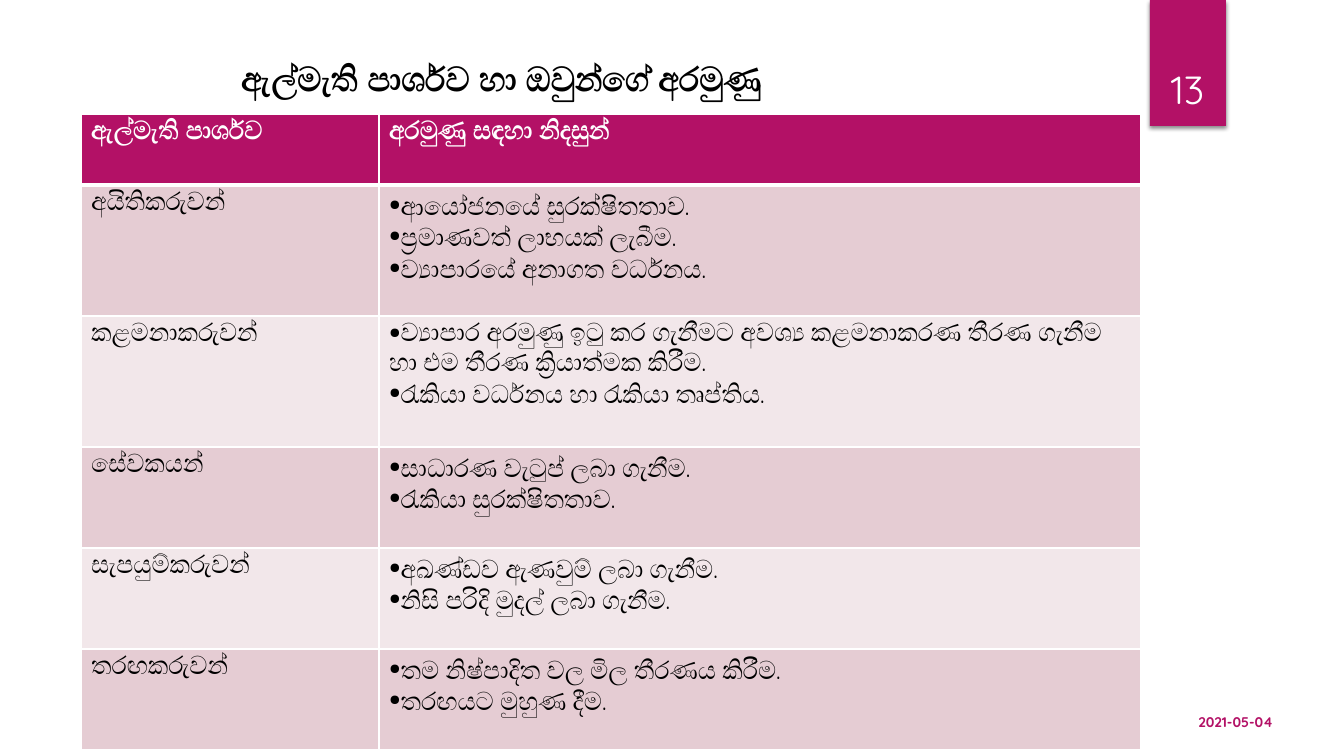
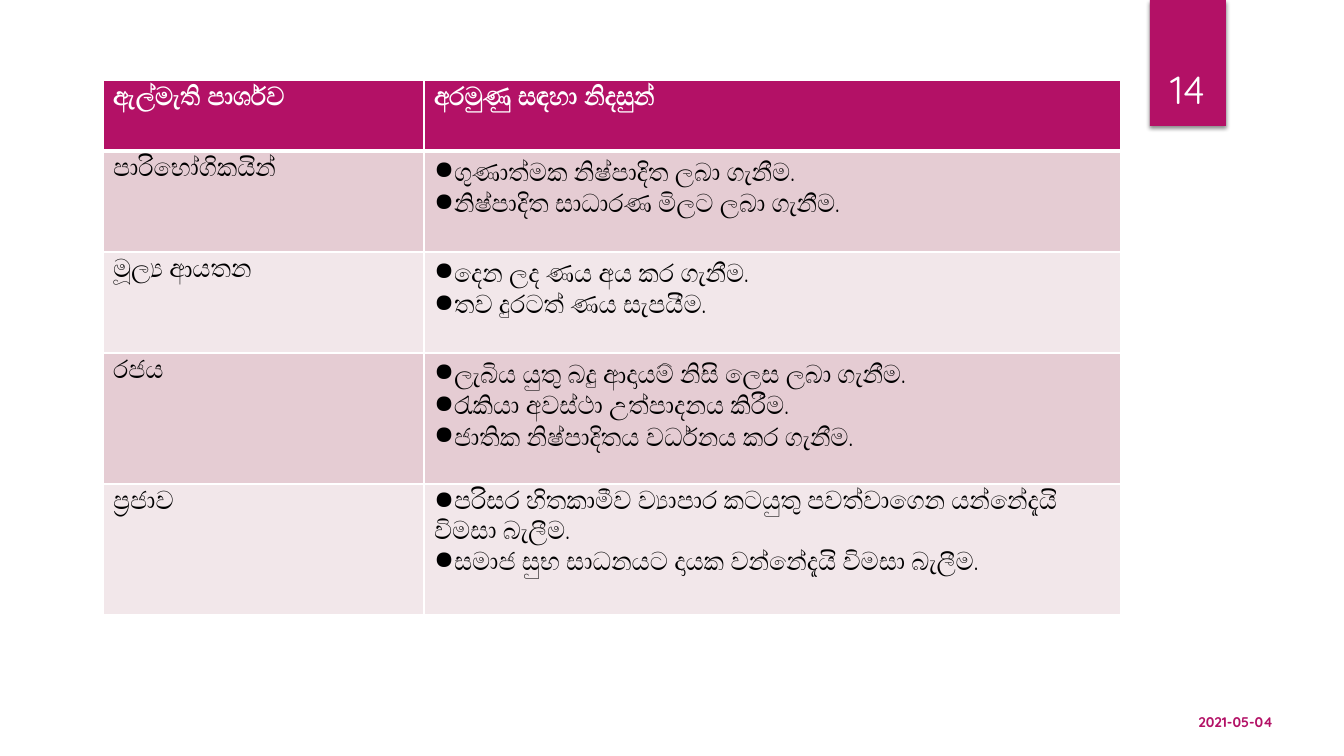
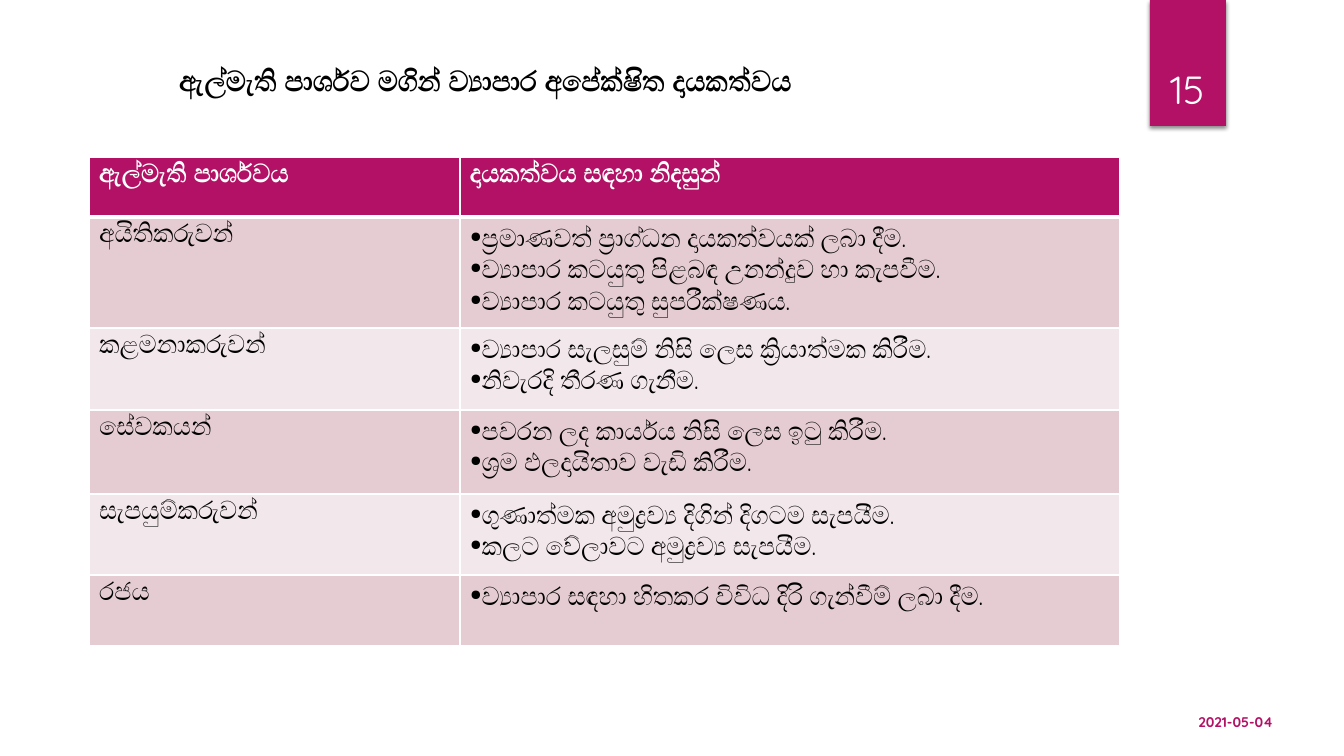
from dataclasses import dataclass
from typing import Any, Optional

from lxml import etree
from pptx import Presentation
from pptx.dml.color import RGBColor
from pptx.enum.shapes import MSO_SHAPE
from pptx.enum.text import MSO_ANCHOR, MSO_AUTO_SIZE, PP_ALIGN
from pptx.oxml.ns import qn
from pptx.util import Emu, Pt

RECT = MSO_SHAPE.RECTANGLE
TOP, MIDDLE, BOTTOM = MSO_ANCHOR.TOP, MSO_ANCHOR.MIDDLE, MSO_ANCHOR.BOTTOM
LEFT, CENTER, RIGHT = PP_ALIGN.LEFT, PP_ALIGN.CENTER, PP_ALIGN.RIGHT
NO_FIT = MSO_AUTO_SIZE.NONE

SLIDE_W, SLIDE_H = 1344, 756
EMU_PER_PX = 12192000 / SLIDE_W
TITLE_ONLY, BLANK = 5, 6

MAGENTA, WHITE, BLACK = "B31166", "FFFFFF", "000000"
BANDS = ("E5CCD3", "F2E7EA")
FONT = "Quicksand"
DATE = "2021-05-04"
JOINER = chr(0x200D)
CONJUNCTS = ("්ර", "ව්ය", "ශ්ය", "ල්ය")

HEADER_FMT = {"size": Pt(18), "bold": True, "color": WHITE}
BODY_FMT = {"size": Pt(18), "bold": False, "color": BLACK}
DATE_FMT = {"size": Pt(10), "bold": True, "color": MAGENTA}
NUMBER_FMT = {"size": Pt(28), "bold": False, "color": WHITE}


@dataclass(frozen=True)
class Box:
    x: int
    y: int
    w: int
    h: int


@dataclass(frozen=True)
class Title:
    text: str
    box: Box
    size: int


@dataclass(frozen=True)
class Row:
    height: int
    party: str
    points: tuple[str, ...]


@dataclass(frozen=True)
class PartySlide:
    number: int
    title: Optional[Title]
    x: int
    y: int
    cols: tuple[int, int]
    header_height: int
    header: tuple[str, str]
    bullet_pct: int
    rows: tuple[Row, ...]


SLIDES = (
    PartySlide(
        13, Title("ඇල්මැති පාර්ශව හා ඔවුන්ගේ අරමුණු", Box(231, 53, 732, 82), 24),
        81, 114, (298, 762), 71, ("ඇල්මැති පාර්ශව", "අරමුණු සඳහා නිදසුන්"), 58,
        (
            Row(131, "අයිතිකරුවන්", (
                "ආයෝජනයේ සුරක්ෂිතතාව.",
                "ප්රමාණවත් ලාභයක් ලැබීම.",
                "ව්යාපාරයේ අනාගත වර්ධනය.")),
            Row(131, "කළමනාකරුවන්", (
                "ව්යාපාර අරමුණු ඉටු කර ගැනීමට අවශ්ය කළමනාකරණ තීරණ ගැනීම "
                "හා එම තීරණ ක්රියාත්මක කිරීම.",
                "රැකියා වර්ධනය හා රැකියා තෘප්තිය.")),
            Row(101, "සේවකයන්", (
                "සාධාරණ වැටුප් ලබා ගැනීම.",
                "රැකියා සුරක්ෂිතතාව.")),
            Row(101, "සැපයුම්කරුවන්", (
                "අඛණ්ඩව ඇණවුම් ලබා ගැනීම.",
                "නිසි පරිදි මුදල් ලබා ගැනීම.")),
            Row(101, "තරඟකරුවන්", (
                "තම නිෂ්පාදිත වල මිල තීරණය කිරීම.",
                "තරඟයට මුහුණ දීම.")),
        )),
    PartySlide(
        14, None,
        103, 80, (321, 697), 71, ("ඇල්මැති පාර්ශව", "අරමුණු සඳහා නිදසුන්"), 100,
        (
            Row(101, "පාරිභෝගිකයින්", (
                "ගුණාත්මක නිෂ්පාදිත ලබා ගැනීම.",
                "නිෂ්පාදිත සාධාරණ මිලට ලබා ගැනීම.")),
            Row(101, "මූල්ය ආයතන", (
                "දෙන ලද ණය අය කර ගැනීම.",
                "තව දුරටත් ණය සැපයීම.")),
            Row(131, "රජය", (
                "ලැබිය යුතු බදු ආදායම් නිසි ලෙස ලබා ගැනීම.",
                "රැකියා අවස්ථා උත්පාදනය කිරීම.",
                "ජාතික නිෂ්පාදිතය වර්ධනය කර ගැනීම.")),
            Row(131, "ප්රජාව", (
                "පරිසර හිතකාමීව ව්යාපාර කටයුතු පවත්වාගෙන යන්නේදැයි විමසා බැලීම.",
                "සමාජ සුභ සාධනයට දායක වන්නේදැයි විමසා බැලීම.")),
        )),
    PartySlide(
        15, Title("ඇල්මැති පාර්ශව මගින් ව්යාපාර අපේක්ෂිත දායකත්වය", Box(169, 58, 919, 44), 20),
        89, 157, (371, 660), 60, ("ඇල්මැති පාර්ශවය", "දායකත්වය සඳහා නිදසුන්"), 58,
        (
            Row(111, "අයිතිකරුවන්", (
                "ප්රමාණවත් ප්රාග්ධන දායකත්වයක් ලබා දීම.",
                "ව්යාපාර කටයුතු පිළබඳ උනන්දුව හා කැපවීම.",
                "ව්යාපාර කටයුතු සුපරීක්ෂණය.")),
            Row(82, "කළමනාකරුවන්", (
                "ව්යාපාර සැලසුම් නිසි ලෙස ක්රියාත්මක කිරීම.",
                "නිවැරදි තීරණ ගැනීම.")),
            Row(84, "සේවකයන්", (
                "පවරන ලද කාර්යය නිසි ලෙස ඉටු කිරීම.",
                "ශ්රම ඵලදායිතාව වැඩි කිරීම.")),
            Row(81, "සැපයුම්කරුවන්", (
                "ගුණාත්මක අමුද්රව්ය දිගින් දිගටම සැපයීම.",
                "කලට වේලාවට අමුද්රව්ය සැපයීම.")),
            Row(71, "රජය", (
                "ව්යාපාර සඳහා හිතකර විවිධ දිරි ගැන්වීම් ලබා දීම.",)),
        )),
)


def px(n: float) -> Emu:
    return Emu(round(n * EMU_PER_PX))


def rgb(color: str) -> RGBColor:
    return RGBColor.from_string(color)


def place(box: Box) -> tuple[Emu, ...]:
    return px(box.x), px(box.y), px(box.w), px(box.h)


def join_conjuncts(text: str) -> str:
    for letters in CONJUNCTS:
        text = text.replace(letters, letters[:-1] + JOINER + letters[-1])
    return text


def add_run(p: Any, text: str, fmt: dict[str, Any]) -> None:
    r = p.add_run()
    r.text = join_conjuncts(text)
    for name, value in {"name": FONT, **fmt}.items():
        if name == "color":
            r.font.color.rgb = rgb(value)
        else:
            setattr(r.font, name, value)


def write(tf: Any, text: str, fmt: dict[str, Any], align: Any = LEFT, anchor: Any = TOP) -> None:
    for name, value in {"word_wrap": True, "auto_size": NO_FIT, "vertical_anchor": anchor}.items():
        setattr(tf, name, value)
    p = tf.paragraphs[0]
    p.alignment = align
    add_run(p, text, fmt)


def add_text(s: Any, box: Box, text: str, fmt: dict[str, Any], align: Any, anchor: Any) -> None:
    write(s.shapes.add_textbox(*place(box)).text_frame, text, fmt, align, anchor)


def add_ribbon(s: Any) -> None:
    sp = s.shapes.add_shape(RECT, *place(Box(1150, 0, 76, 126)))
    sp.fill.solid()
    sp.fill.fore_color.rgb = rgb(MAGENTA)
    sp.line.fill.background()
    sp.shadow.inherit = False
    effects = sp._element.spPr.find(qn("a:effectLst"))
    shadow = etree.SubElement(effects, qn("a:outerShdw"), blurRad=str(Pt(3)), dist=str(Pt(2)),
                              dir="5400000", algn="ctr", rotWithShape="0")
    color = etree.SubElement(shadow, qn("a:srgbClr"), val=BLACK)
    etree.SubElement(color, qn("a:alpha"), val="45000")


def add_title(s: Any, title: Title) -> None:
    sp = s.shapes.title
    sp.left, sp.top, sp.width, sp.height = place(title.box)
    write(sp.text_frame, title.text, {"size": Pt(title.size), "bold": True, "color": BLACK})


def style_cell(cell: Any, fill: str, bottom: int = 1) -> None:
    tc_pr = cell._tc.get_or_add_tcPr()
    for side, width in {"lnL": 1, "lnR": 1, "lnT": 1, "lnB": bottom}.items():
        ln = etree.SubElement(tc_pr, qn(f"a:{side}"), w=str(Pt(width)))
        solid = etree.SubElement(ln, qn("a:solidFill"))
        etree.SubElement(solid, qn("a:srgbClr"), val=WHITE)
    cell.fill.solid()
    cell.fill.fore_color.rgb = rgb(fill)


def write_cell(cell: Any, lines: tuple[str, ...], fmt: dict[str, Any], bullet_pct: int = 0) -> None:
    tf = cell.text_frame
    for i, line in enumerate(lines):
        p = tf.add_paragraph() if i else tf.paragraphs[0]
        if bullet_pct:
            p_pr = p._p.get_or_add_pPr()
            p_pr.set("marL", "0")
            p_pr.set("indent", "0")
            etree.SubElement(p_pr, qn("a:buSzPct"), val=str(bullet_pct * 1000))
            etree.SubElement(p_pr, qn("a:buChar"), char="●")
        add_run(p, line, fmt)


def add_party_table(s: Any, spec: PartySlide) -> None:
    heights = (spec.header_height, *(row.height for row in spec.rows))
    box = Box(spec.x, spec.y, sum(spec.cols), sum(heights))
    table = s.shapes.add_table(len(heights), len(spec.cols), *place(box)).table
    for column, width in zip(table.columns, spec.cols):
        column.width = px(width)
    for table_row, height in zip(table.rows, heights):
        table_row.height = px(height)
    for c, heading in enumerate(spec.header):
        cell = table.cell(0, c)
        style_cell(cell, MAGENTA, 3)
        write_cell(cell, (heading,), HEADER_FMT)
    for i, row in enumerate(spec.rows):
        party, points = table.cell(i + 1, 0), table.cell(i + 1, 1)
        for cell in (party, points):
            style_cell(cell, BANDS[i % 2])
        write_cell(party, (row.party,), BODY_FMT)
        write_cell(points, row.points, BODY_FMT, spec.bullet_pct)


def add_party_slide(prs: Any, spec: PartySlide) -> None:
    s = prs.slides.add_slide(prs.slide_layouts[TITLE_ONLY if spec.title else BLANK])
    add_ribbon(s)
    add_text(s, Box(1174, 705, 109, 33), DATE, DATE_FMT, RIGHT, MIDDLE)
    add_text(s, Box(1141, 32, 93, 85), str(spec.number), NUMBER_FMT, CENTER, BOTTOM)
    if spec.title:
        add_title(s, spec.title)
    add_party_table(s, spec)


def main() -> None:
    prs = Presentation()
    prs.slide_width, prs.slide_height = px(SLIDE_W), px(SLIDE_H)
    for spec in SLIDES:
        add_party_slide(prs, spec)
    prs.save("out.pptx")


if __name__ == "__main__":
    main()
